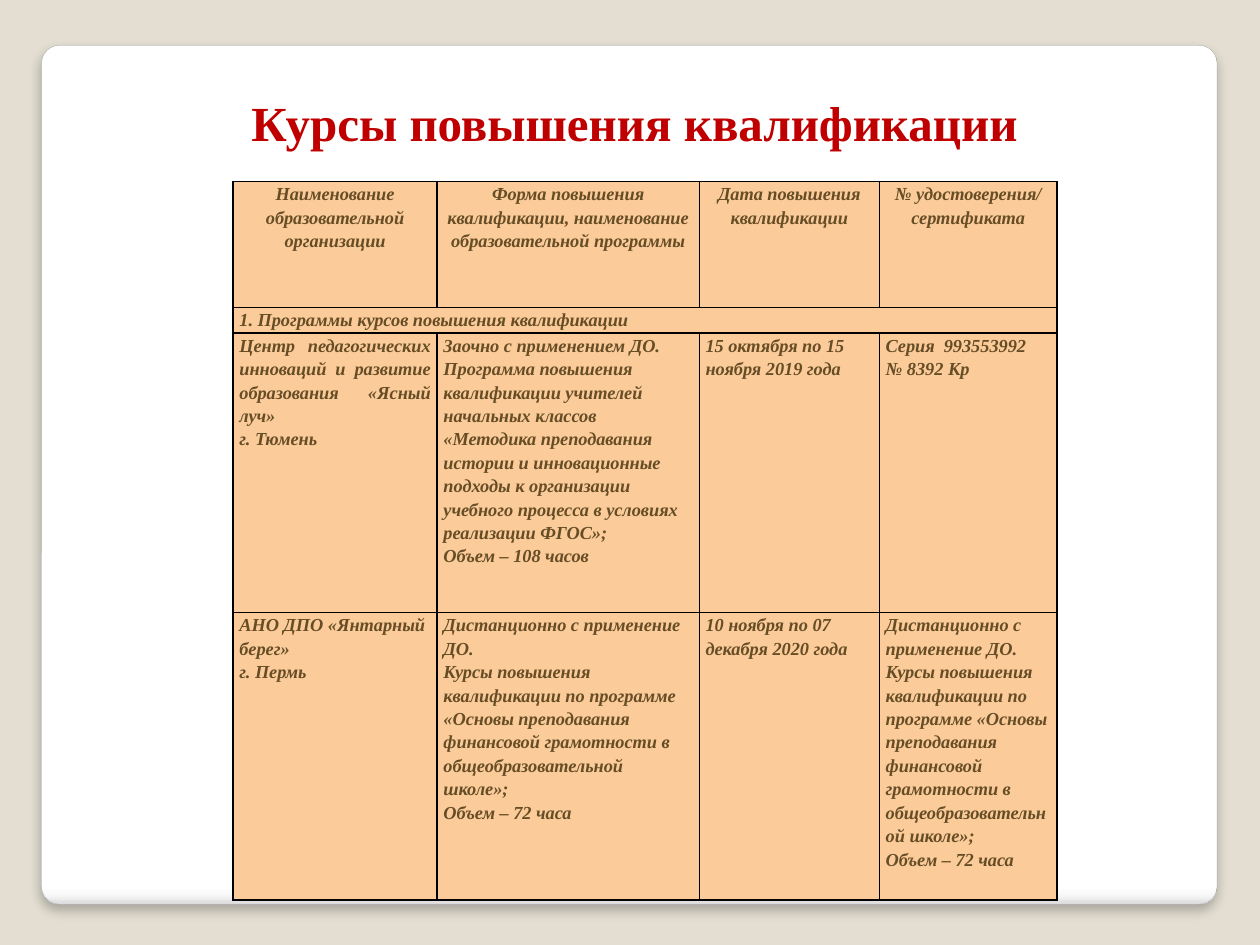
from lxml.etree import SubElement
from pptx import Presentation
from pptx.dml.color import RGBColor
from pptx.enum.shapes import MSO_SHAPE
from pptx.enum.text import MSO_ANCHOR, PP_ALIGN
from pptx.oxml.ns import qn
from pptx.util import Inches, Pt

SLIDE_WIDTH, SLIDE_HEIGHT = 10, 7.5
FONT = "Times New Roman"
COLUMN_WIDTHS = [1.62, 2.08, 1.43, 1.41]
ROW_HEIGHTS = [1, 0.2, 2.22, 2.28]
LEFT, CENTER, JUSTIFY = PP_ALIGN.LEFT, PP_ALIGN.CENTER, PP_ALIGN.JUSTIFY

HEADINGS = [
    ["Наименование", "образовательной", "организации"],
    ["Форма повышения квалификации, наименование образовательной программы"],
    ["Дата повышения", "квалификации"],
    ["№ удостоверения/", "сертификата"],
]
SECTION = ["1. Программы курсов повышения квалификации"]
HISTORY_COURSE = [
    ["Центр педагогических инноваций и развитие образования «Ясный луч»", "г. Тюмень"],
    [
        "Заочно с применением ДО.",
        "Программа повышения квалификации учителей начальных классов «Методика "
        "преподавания истории и инновационные подходы к организации учебного "
        "процесса в условиях реализации ФГОС»;",
        "Объем – 108 часов",
    ],
    ["15 октября по 15 ноября 2019 года"],
    ["Серия  993553992", "№ 8392 Кр"],
]
FINANCE_PROGRAM = [
    "Дистанционно с применение ДО.",
    "Курсы повышения квалификации по программе «Основы преподавания "
    "финансовой грамотности в общеобразовательной школе»;",
    "Объем – 72 часа",
]
FINANCE_COURSE = [
    ["АНО ДПО «Янтарный берег»", "г. Пермь"],
    FINANCE_PROGRAM,
    ["10 ноября по 07 декабря 2020 года"],
    FINANCE_PROGRAM,
]


def color(value):
    return RGBColor.from_string(value)


def area(left, top, width, height):
    return (
        Inches(left * SLIDE_WIDTH),
        Inches(top * SLIDE_HEIGHT),
        Inches(width * SLIDE_WIDTH),
        Inches(height * SLIDE_HEIGHT),
    )


def write(frame, lines, size=10.5, ink="674D26", italic=True, align=LEFT,
          first_align=None, spacing=1.15):
    frame.word_wrap = True
    for index, line in enumerate(lines):
        paragraph = frame.paragraphs[0] if index == 0 else frame.add_paragraph()
        paragraph.alignment = first_align if index == 0 and first_align else align
        paragraph.line_spacing = spacing
        run = paragraph.add_run()
        run.text = line
        run.font.name = FONT
        run.font.size = Pt(size)
        run.font.bold = True
        run.font.italic = italic
        run.font.color.rgb = color(ink)


def add_color(parent, value):
    return SubElement(parent, qn("a:srgbClr"), val=value)


def add_panel(slide):
    panel = slide.shapes.add_shape(
        MSO_SHAPE.ROUNDED_RECTANGLE, *area(0.033, 0.048, 0.933, 0.909))
    panel.adjustments[0] = 0.021
    panel.fill.gradient()
    panel.line.color.rgb = color("A4A4A4")
    panel.line.width = Pt(0.16)
    panel.shadow.inherit = False

    properties = panel.element.spPr
    gradient = properties.find(qn("a:gradFill"))
    gradient.find(qn("a:lin")).set("ang", "5400000")
    stops = gradient.find(qn("a:gsLst"))
    for stop in list(stops):
        stops.remove(stop)
    for percent, shade in [(0, "FFFFFF"), (98, "FFFFFF"), (99, "F7F7F7"), (100, "DADADA")]:
        add_color(SubElement(stops, qn("a:gs"), pos=str(percent * 1000)), shade)

    shadow = SubElement(
        properties.find(qn("a:effectLst")), qn("a:outerShdw"),
        blurRad=str(Pt(6)), dist=str(Pt(4)), dir="5400000", algn="t", rotWithShape="0")
    SubElement(add_color(shadow, "000000"), qn("a:alpha"), val="25000")


def add_title(slide, heading):
    title = slide.shapes.add_textbox(*area(0.098, 0.087, 0.811, 0.157))
    title.text_frame.vertical_anchor = MSO_ANCHOR.TOP
    title.text_frame.margin_top = Inches(0.08)
    write(title.text_frame, [heading], size=28, ink="C00000", italic=False,
          align=CENTER, spacing=1)


def style_cell(cell):
    cell.margin_left = cell.margin_right = Inches(0.05)
    cell.margin_top = cell.margin_bottom = 0
    properties = cell._tc.get_or_add_tcPr()
    for side in ("a:lnL", "a:lnR", "a:lnT", "a:lnB"):
        border = SubElement(properties, qn(side), w=str(Pt(1)))
        add_color(SubElement(border, qn("a:solidFill")), "000000")
    cell.fill.solid()
    cell.fill.fore_color.rgb = color("FBCC9A")


def add_courses(slide):
    courses = slide.shapes.add_table(
        len(ROW_HEIGHTS), len(COLUMN_WIDTHS), *area(0.185, 0.192, 0.654, 0.76)).table
    for column, width in zip(courses.columns, COLUMN_WIDTHS):
        column.width = Inches(width)
    for row, height in zip(courses.rows, ROW_HEIGHTS):
        row.height = Inches(height)
    for cell in courses.iter_cells():
        style_cell(cell)
    courses.cell(1, 0).merge(courses.cell(1, len(COLUMN_WIDTHS) - 1))

    content = [HEADINGS, [SECTION], HISTORY_COURSE, FINANCE_COURSE]
    for row, entries in enumerate(content):
        for column, lines in enumerate(entries):
            justified = entries is HISTORY_COURSE and column < 2
            write(courses.cell(row, column).text_frame, lines,
                  align=CENTER if entries is HEADINGS else LEFT,
                  first_align=JUSTIFY if justified else None)


def main():
    presentation = Presentation()
    presentation.slide_width = Inches(SLIDE_WIDTH)
    presentation.slide_height = Inches(SLIDE_HEIGHT)
    slide = presentation.slides.add_slide(presentation.slide_layouts[6])
    slide.background.fill.solid()
    slide.background.fill.fore_color.rgb = color("E3DED1")
    add_panel(slide)
    add_title(slide, "Курсы повышения квалификации")
    add_courses(slide)
    presentation.save("out.pptx")


if __name__ == "__main__":
    main()
